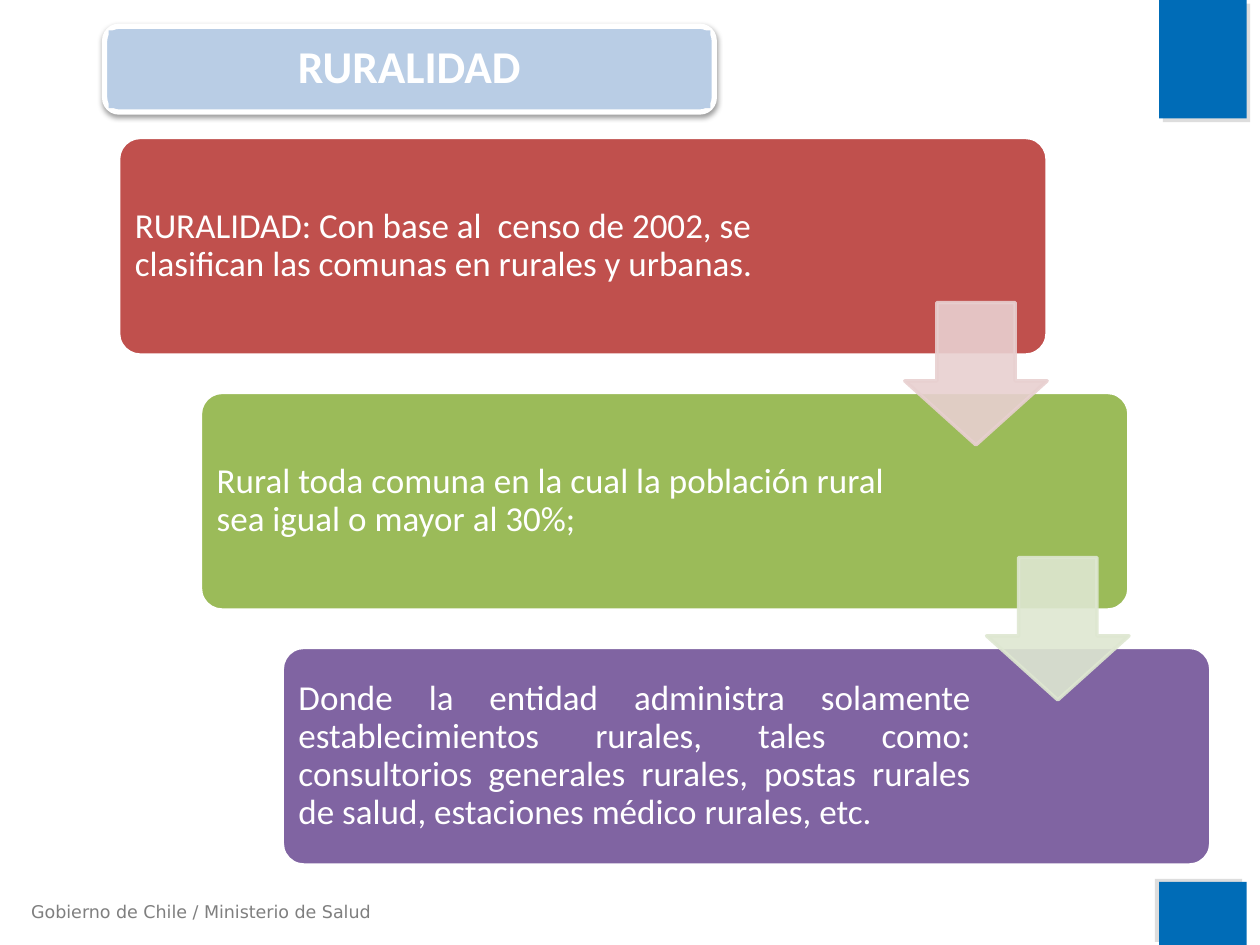
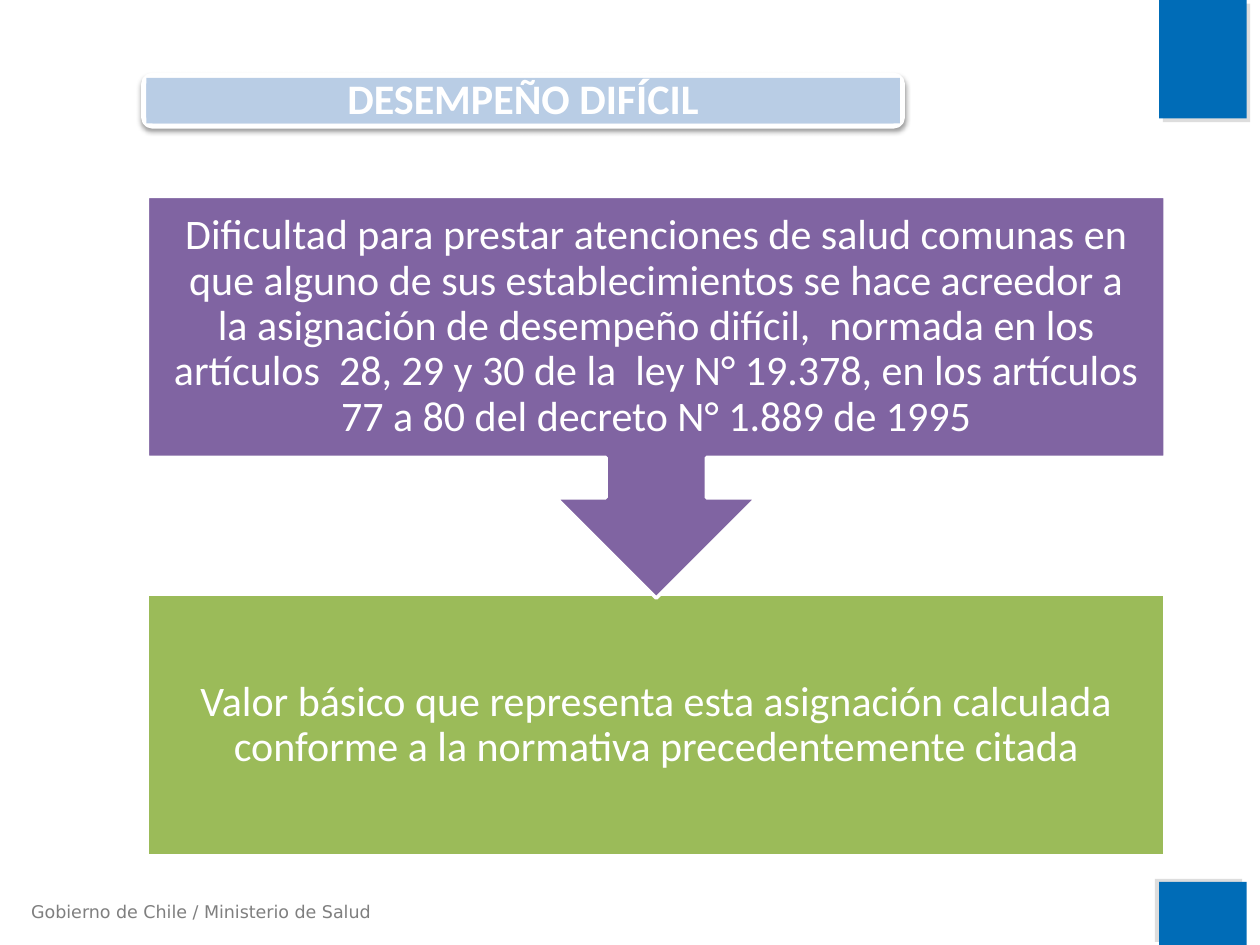
import lxml.etree
import pptx
import pptx.dml.color
import pptx.enum.shapes
import pptx.enum.text
import pptx.oxml.ns
import pptx.util

Cm = pptx.util.Cm
Pt = pptx.util.Pt
SHAPE = pptx.enum.shapes.MSO_SHAPE
ALIGN = pptx.enum.text.PP_ALIGN
ANCHOR = pptx.enum.text.MSO_ANCHOR
qn = pptx.oxml.ns.qn


class Theme:
    font, footer_font = "Calibri", "DejaVu Sans"
    white, gray = "FFFFFF", "7F7F7F"
    corner = "006CB7"
    title_band = "B9CDE5"
    brick, green, purple = "C0504D", "9BBB59", "8064A2"
    pale_brick, pale_green = "E8D0D0", "DEE7D1"
    footer_size, step_size, box_size = 10, 20, 24
    box_line, band_line = 2, 3


FOOTER = "Gobierno de Chile / Ministerio de Salud"
CORNERS = [(0, 2.39, 45), (17.78, 1.27, 215)]

RURALITY = {
    "title": "RURALIDAD", "size": 26, "band": (2.11, 0.53, 12.29, 1.73),
    "border": 0.08, "inset": 0.28,
    "steps": [
        ("RURALIDAD: Con base al  censo de 2002, se clasifican las comunas "
         "en rurales y urbanas.", Theme.brick, ALIGN.LEFT, Theme.pale_brick),
        ("Rural toda comuna en la cual la población rural sea igual o mayor "
         "al 30%;", Theme.green, ALIGN.LEFT, Theme.pale_green),
        ("Donde la entidad administra solamente establecimientos rurales, "
         "tales como: consultorios generales rurales, postas rurales de "
         "salud, estaciones médico rurales, etc.",
         Theme.purple, ALIGN.JUSTIFY, None),
    ],
}
DIFFICULTY = {
    "title": "DESEMPEÑO DIFÍCIL", "size": 24, "band": (2.9, 1.52, 15.29, 1.02),
    "border": 0.05, "inset": 0.25,
    "cause": "Dificultad para prestar atenciones de salud comunas en que "
             "alguno de sus establecimientos se hace acreedor a la asignación "
             "de desempeño difícil,  normada en los artículos  28, 29 y 30 de "
             "la  ley N° 19.378, en los artículos 77 a 80 del decreto "
             "N° 1.889 de 1995",
    "value": "Valor básico que representa esta asignación calculada conforme "
             "a la normativa precedentemente citada",
}


def rgb(color):
    return pptx.dml.color.RGBColor.from_string(color)


def add_alpha(color_element, percent):
    lxml.etree.SubElement(color_element, qn("a:alpha"), val=str(percent * 1000))


def add_block(slide, kind, box, fill, line=None, width=Theme.box_line):
    block = slide.shapes.add_shape(kind, *map(Cm, box))
    block.shadow.inherit = False
    block.fill.solid()
    block.fill.fore_color.rgb = rgb(fill)
    if line:
        block.line.color.rgb = rgb(line)
        block.line.width = Pt(width)
    else:
        block.line.fill.background()
    return block


def add_shadow(block, color, alpha, blur, distance, angle):
    effects = block.element.spPr.find(qn("a:effectLst"))
    shadow = lxml.etree.SubElement(
        effects, qn("a:outerShdw"), blurRad=str(Pt(blur)),
        dist=str(Pt(distance)), dir=str(angle * 60000), rotWithShape="0")
    add_alpha(lxml.etree.SubElement(shadow, qn("a:srgbClr"), val=color), alpha)


def write(shape, text, size, insets, align=ALIGN.CENTER, bold=False):
    frame = shape.text_frame
    frame.text = text
    frame.word_wrap = True
    frame.auto_size = pptx.enum.text.MSO_AUTO_SIZE.NONE
    frame.vertical_anchor = ANCHOR.MIDDLE
    (frame.margin_left, frame.margin_top,
     frame.margin_right, frame.margin_bottom) = map(Cm, insets)
    paragraph = frame.paragraphs[0]
    paragraph.alignment = align
    paragraph.line_spacing = 0.9
    paragraph.font.name = Theme.font
    paragraph.font.size = Pt(size)
    paragraph.font.bold = bold
    paragraph.font.color.rgb = rgb(Theme.white)


def furnish_layout(layout, slide):
    furniture = []
    for top, height, angle in CORNERS:
        corner = add_block(slide, SHAPE.RECTANGLE, (23.37, top, 1.76, height),
                           Theme.corner)
        add_shadow(corner, Theme.gray, 25, 0, 3, angle)
        furniture.append(corner)
    footer = slide.shapes.add_textbox(Cm(0.38), Cm(18.03), Cm(7.67), Cm(0.69))
    footer.text_frame.text = FOOTER
    footer.text_frame.word_wrap = True
    font = footer.text_frame.paragraphs[0].font
    font.name = Theme.footer_font
    font.size = Pt(Theme.footer_size)
    font.color.rgb = rgb(Theme.gray)
    for item in furniture + [footer]:
        layout.shapes.element.append(item.element)


def add_title(slide, content):
    left, top, width, height = content["band"]
    border = content["border"]
    band = add_block(slide, SHAPE.ROUNDED_RECTANGLE, content["band"],
                     Theme.title_band, Theme.white, Theme.band_line)
    add_shadow(band, "000000", 38, 3.1, 1.6, 90)
    title = slide.shapes.title
    title.left, title.top = Cm(left + border), Cm(top + border)
    title.width, title.height = Cm(width - 2 * border), Cm(height - 2 * border)
    title.fill.solid()
    title.fill.fore_color.rgb = rgb(Theme.title_band)
    write(title, content["title"], content["size"], [content["inset"]] * 4,
          bold=True)
    title.element.addprevious(band.element)


def add_steps(slide, steps):
    width, height, arrow_side = 18.72, 4.39, 2.87
    corners = [(2.39 + 1.65 * i, 2.77 + 5.14 * i) for i in range(len(steps))]
    for (left, top), (text, color, align, _) in zip(corners, steps):
        step = add_block(slide, SHAPE.ROUNDED_RECTANGLE,
                         (left, top, width, height), color, Theme.white)
        step.adjustments[0] = 0.1
        write(step, text, Theme.step_size, (0.2, 0.2, 4.71, 0.2), align)
    for (left, top), (*_, pale) in zip(corners, steps):
        if pale:
            arrow = add_block(
                slide, SHAPE.DOWN_ARROW,
                (left + width - arrow_side, top + 3.33, arrow_side, arrow_side),
                pale, pale)
            arrow.adjustments[0], arrow.adjustments[1] = 0.55, 0.45
            for color in arrow.element.spPr.iter(qn("a:srgbClr")):
                add_alpha(color, 90)


def add_cause_and_value(slide, content):
    left, width = 2.97, 20.52
    value = add_block(slide, SHAPE.RECTANGLE, (left, 11.99, width, 5.26),
                      Theme.green, Theme.white)
    cause = add_block(slide, SHAPE.DOWN_ARROW_CALLOUT, (left, 3.96, width, 8.1),
                      Theme.purple, Theme.white)
    for box, text in ((value, content["value"]), (cause, content["cause"])):
        write(box, text, Theme.box_size, [0.48] * 4)


def main():
    deck = pptx.Presentation()
    deck.slide_width, deck.slide_height = Cm(25.4), Cm(19.05)
    layout = deck.slide_layouts[5]
    rurality = deck.slides.add_slide(layout)
    difficulty = deck.slides.add_slide(layout)
    furnish_layout(layout, rurality)
    add_title(rurality, RURALITY)
    add_steps(rurality, RURALITY["steps"])
    add_title(difficulty, DIFFICULTY)
    add_cause_and_value(difficulty, DIFFICULTY)
    deck.save("out.pptx")


if __name__ == "__main__":
    main()
